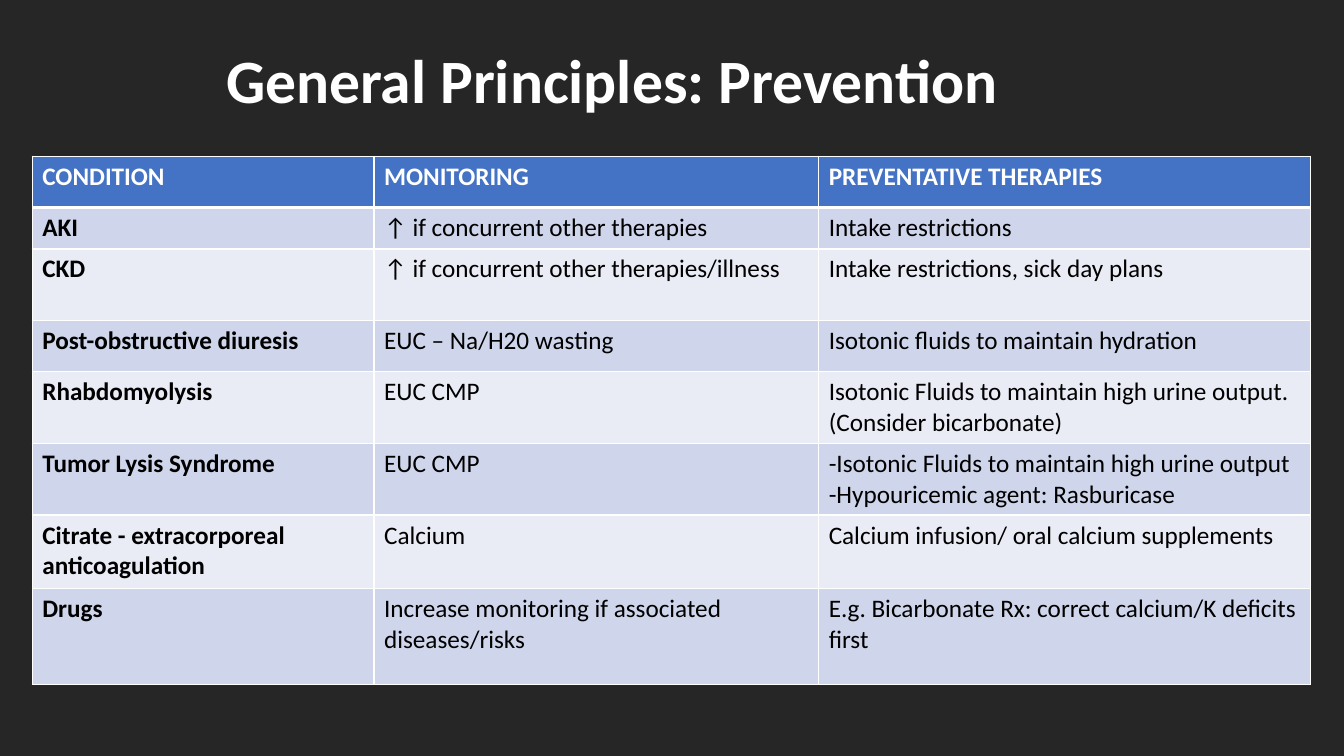
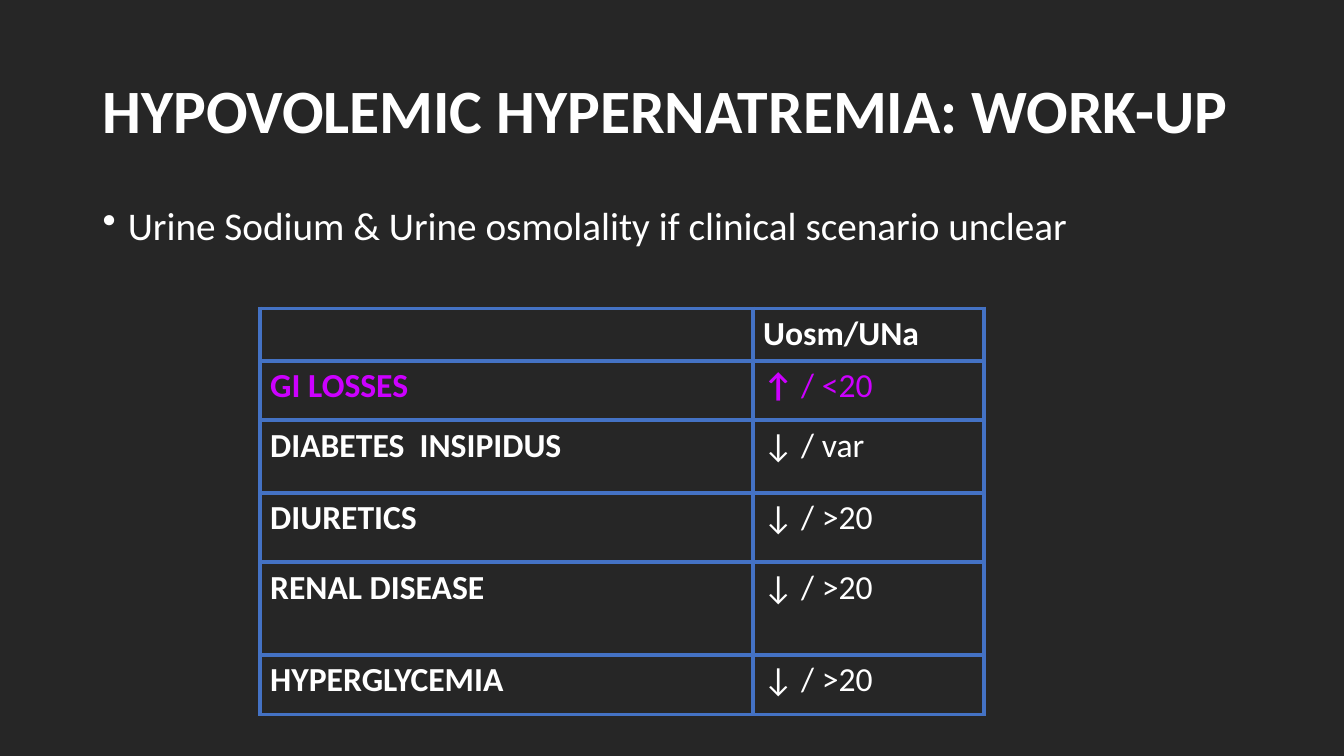
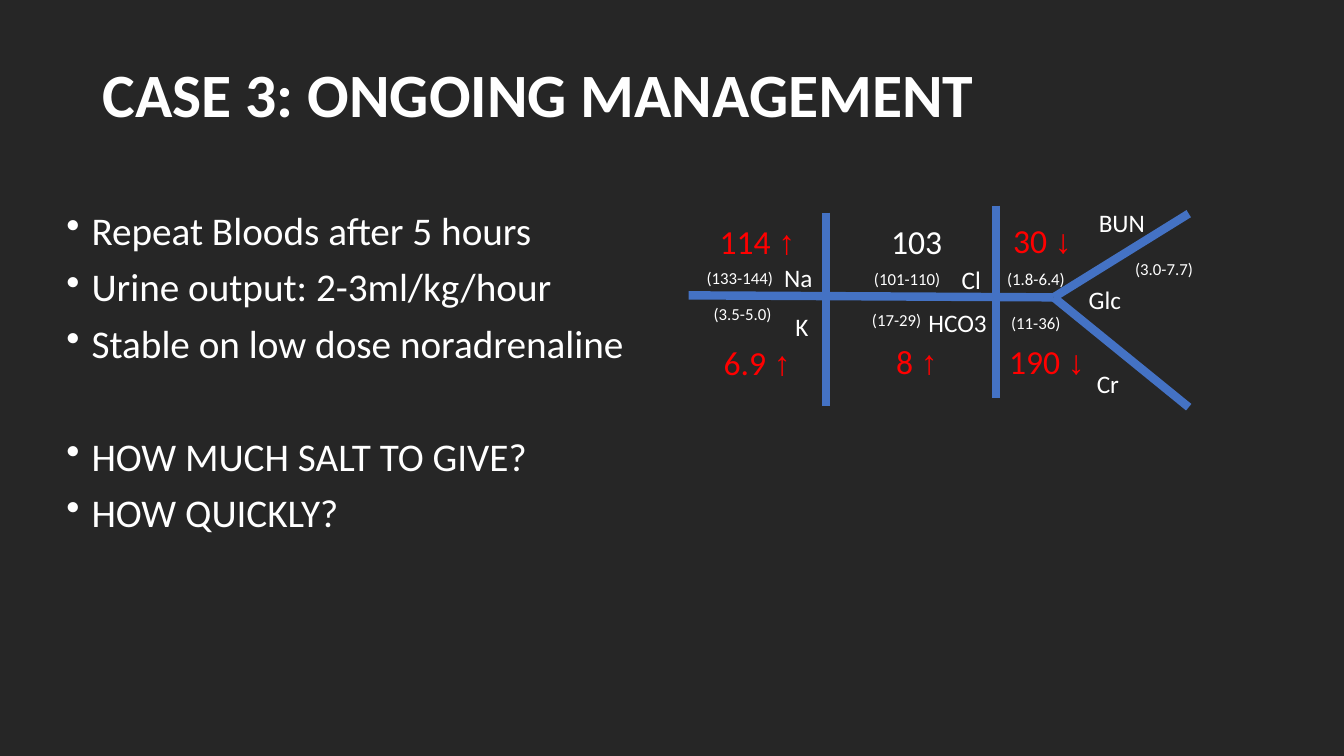
import dataclasses

import lxml.etree
import pptx
import pptx.dml.color
import pptx.enum.shapes
import pptx.enum.text
import pptx.oxml.ns
import pptx.util

Inches = pptx.util.Inches
Color = pptx.dml.color.RGBColor
Align = pptx.enum.text.PP_ALIGN
Anchor = pptx.enum.text.MSO_ANCHOR


@dataclasses.dataclass(frozen=True)
class Theme:
    background: Color = Color(0x26, 0x26, 0x26)
    light: Color = Color(0xFF, 0xFF, 0xFF)
    dark: Color = Color(0, 0, 0)
    accent: Color = Color(0x44, 0x72, 0xC4)
    band_odd: Color = Color(0xCF, 0xD5, 0xEA)
    band_even: Color = Color(0xE9, 0xEB, 0xF5)
    highlight: Color = Color(0xCC, 0x00, 0xFF)
    abnormal: Color = Color(0xFF, 0, 0)
    font: str = "Calibri"
    arrow_font: str = "Times New Roman"
    title_size: int = 44
    body_size: int = 28
    value_size: int = 24
    label_size: int = 18
    range_size: int = 12


THEME = Theme()


def add_child(parent, tag, **attributes):
    child = lxml.etree.SubElement(parent, pptx.oxml.ns.qn(tag))
    for name, value in attributes.items():
        child.set(name, str(value))
    return child


def write_text(frame, content, size=THEME.label_size, color=THEME.light, bold=False,
               font=THEME.font, align=Align.LEFT, line_spacing=None, space_before=None,
               bullet=False):
    """Write lines of a string, or a list of (text, font, bold) runs as one line."""
    lines = content.split("\n") if isinstance(content, str) else [content]
    for index, line in enumerate(lines):
        paragraph = frame.add_paragraph() if index else frame.paragraphs[0]
        paragraph.alignment = align
        if line_spacing:
            paragraph.line_spacing = line_spacing
        if space_before:
            paragraph.space_before = pptx.util.Pt(space_before)
        if bullet:
            properties = paragraph._p.get_or_add_pPr()
            properties.set("marL", str(Inches(0.25)))
            properties.set("indent", str(Inches(-0.25)))
            add_child(properties, "a:buChar", char="•")
        runs = [(line, font, bold)] if isinstance(line, str) else line
        for text, run_font, run_bold in runs:
            run = paragraph.add_run()
            run.text = text
            run.font.name = run_font
            run.font.bold = run_bold
            run.font.size = pptx.util.Pt(size)
            run.font.color.rgb = color


def add_text(slide, content, left, top, width, height, anchor=Anchor.TOP, **text_format):
    box = slide.shapes.add_textbox(Inches(left), Inches(top), Inches(width), Inches(height))
    box.text_frame.word_wrap = True
    box.text_frame.vertical_anchor = anchor
    write_text(box.text_frame, content, **text_format)
    return box


def add_title(slide, text, left=0.92, top=0.4, width=11.5, align=Align.LEFT):
    add_text(slide, text, left, top, width, 1.45, anchor=Anchor.MIDDLE, align=align,
             size=THEME.title_size, bold=True, line_spacing=0.9)


def add_bullets(slide, groups, left, top, width):
    """Add bulleted lines; each later group starts after a gap of one line."""
    box = add_text(slide, "\n".join("\n".join(group) for group in groups), left, top, width,
                   4.76, size=THEME.body_size, line_spacing=0.9, space_before=10, bullet=True)
    start = 0
    for group in groups[:-1]:
        start += len(group)
        box.text_frame.paragraphs[start].space_before = pptx.util.Pt(50.5)


def add_line(slide, start, end):
    line = slide.shapes.add_connector(pptx.enum.shapes.MSO_CONNECTOR.STRAIGHT,
                                      *(Inches(value) for value in start + end))
    line.line.color.rgb = THEME.accent
    line.line.width = pptx.util.Pt(6)
    add_child(line._element.spPr, "a:effectLst")


def set_borders(cell, color, left, right, top, bottom):
    properties = cell._tc.get_or_add_tcPr()
    for side, width in zip("LRTB", (left, right, top, bottom)):
        border = add_child(properties, f"a:ln{side}", w=pptx.util.Pt(width))
        add_child(add_child(border, "a:solidFill"), "a:srgbClr", val=color)


def add_table(slide, rows, left, top, widths, heights, size, text_colors, fills,
              border_color, border, header_rule):
    """Add a table with one text colour and one fill (or None) for each row."""
    frame = slide.shapes.add_table(len(rows), len(widths), Inches(left), Inches(top),
                                   Inches(sum(widths)), Inches(sum(heights)))
    table = frame.table
    table.horz_banding = False
    for column, width in zip(table.columns, widths):
        column.width = Inches(width)
    for row_index, contents in enumerate(rows):
        table.rows[row_index].height = Inches(heights[row_index])
        for column_index, content in enumerate(contents):
            cell = table.cell(row_index, column_index)
            set_borders(cell, border_color, border, border,
                        header_rule if row_index == 1 else border,
                        header_rule if row_index == 0 else border)
            if fills[row_index] is None:
                cell.fill.background()
            else:
                cell.fill.solid()
                cell.fill.fore_color.rgb = fills[row_index]
            if content:
                write_text(cell.text_frame, content, size=size, color=text_colors[row_index],
                           bold=row_index == 0 or column_index == 0)


def build_prevention(slide):
    add_title(slide, "General Principles: Prevention", 0.81, 0.1, 10.53, Align.CENTER)
    rows = [
        ("CONDITION", "MONITORING", "PREVENTATIVE THERAPIES"),
        ("AKI", "↑ if concurrent other therapies", "Intake restrictions"),
        ("CKD", "↑ if concurrent other therapies/illness", "Intake restrictions, sick day plans"),
        ("Post-obstructive diuresis", "EUC – Na/H20 wasting",
         "Isotonic fluids to maintain hydration"),
        ("Rhabdomyolysis", "EUC CMP",
         "Isotonic Fluids to maintain high urine output.\n(Consider bicarbonate)"),
        ("Tumor Lysis Syndrome", "EUC CMP",
         "-Isotonic Fluids to maintain high urine output\n-Hypouricemic agent: Rasburicase"),
        ("Citrate - extracorporeal anticoagulation", "Calcium",
         "Calcium infusion/ oral calcium supplements"),
        ("Drugs", "Increase monitoring if associated diseases/risks",
         "E.g. Bicarbonate Rx: correct calcium/K deficits first"),
    ]
    bands = [THEME.band_even, THEME.band_odd]
    body_rows = range(1, len(rows))
    add_table(slide, rows, 0.32, 1.55, widths=[3.39, 4.41, 4.88],
              heights=[0.51, 0.41, 0.71, 0.51, 0.71, 0.71, 0.73, 0.95],
              size=THEME.label_size,
              text_colors=[THEME.light] + [THEME.dark for _ in body_rows],
              fills=[THEME.accent] + [bands[index % 2] for index in body_rows],
              border_color=THEME.light, border=1, header_rule=3)


def build_work_up(slide):
    add_title(slide, "HYPOVOLEMIC HYPERNATREMIA: WORK-UP")
    add_bullets(slide, [["Urine Sodium & Urine osmolality if clinical scenario unclear"]],
                0.92, 2, 11.5)
    rows = [
        ("", "Uosm/UNa"),
        ("GI LOSSES", [("↑", THEME.font, True), (" / <20", THEME.font, False)]),
        ("DIABETES  INSIPIDUS", "↓ / var"),
        ("DIURETICS", "↓ / >20"),
        ("RENAL DISEASE", "↓ / >20"),
        ("HYPERGLYCEMIA", "↓ / >20"),
    ]
    add_table(slide, rows, 2.58, 3.06, widths=[4.89, 2.29],
              heights=[0.52, 0.59, 0.72, 0.69, 0.92, 0.59], size=THEME.value_size,
              text_colors=[THEME.highlight if row[0] == "GI LOSSES" else THEME.light
                           for row in rows],
              fills=[None] * len(rows),
              border_color=THEME.accent, border=3, header_rule=3)


def add_blood_results(slide):
    """Draw the fishbone of blood results with its labels, ranges and values."""
    fork = (10.45, 2.95)
    for start, end in [
        ((6.83, 2.93), fork),
        ((8.19, 2.11), (8.19, 4.03)),
        ((9.88, 2.04), (9.88, 3.95)),
        ((11.79, 2.12), fork),
        ((11.79, 4.04), fork),
    ]:
        add_line(slide, start, end)

    for label, left, top in [
        ("Na", 7.68, 2.55), ("K", 7.79, 3.04), ("Cl", 9.44, 2.57), ("HCO3", 9.11, 3),
        ("BUN", 10.8, 2.01), ("Cr", 10.78, 3.61), ("Glc", 10.7, 2.77),
    ]:
        add_text(slide, label, left, top, 0.96, 0.4)

    for normal_range, left, top in [
        ("(133-144)", 6.91, 2.61), ("(3.5-5.0)", 6.98, 2.96), ("(101-110)", 8.57, 2.62),
        ("(17-29)", 8.55, 3.02), ("(1.8-6.4)", 9.89, 2.62), ("(11-36)", 9.93, 3.05),
        ("(3.0-7.7)", 11.16, 2.52),
    ]:
        add_text(slide, normal_range, left, top, 0.94, 0.3, size=THEME.range_size)

    for value, arrow, left, top in [
        ("114", "↑", 7.04, 2.14), ("6.9", "↑", 7.08, 3.34), ("8", "↑", 8.79, 3.33),
        ("103", "", 8.74, 2.14), ("30", "↓", 9.95, 2.13), ("190", "↓", 9.91, 3.33),
    ]:
        content = value
        if arrow:
            content = [(f"{value} ", THEME.font, False), (arrow, THEME.arrow_font, False)]
        add_text(slide, content, left, top, 1.1, 0.5, size=THEME.value_size,
                 color=THEME.abnormal if arrow else THEME.light)


def build_management(slide):
    add_title(slide, "CASE 3: ONGOING MANAGEMENT", top=0.24)
    add_bullets(slide, [
        ["Repeat Bloods after 5 hours", "Urine output: 2-3ml/kg/hour",
         "Stable on low dose noradrenaline"],
        ["HOW MUCH SALT TO GIVE?", "HOW QUICKLY?"],
    ], 0.56, 2.05, 12.54)
    add_blood_results(slide)


def main():
    presentation = pptx.Presentation()
    presentation.slide_width = Inches(13.33)
    presentation.slide_height = Inches(7.5)
    background = presentation.slide_master.background.fill
    background.solid()
    background.fore_color.rgb = THEME.background
    blank_layout = presentation.slide_layouts[6]
    for build in (build_prevention, build_work_up, build_management):
        build(presentation.slides.add_slide(blank_layout))
    presentation.save("out.pptx")


if __name__ == "__main__":
    main()
